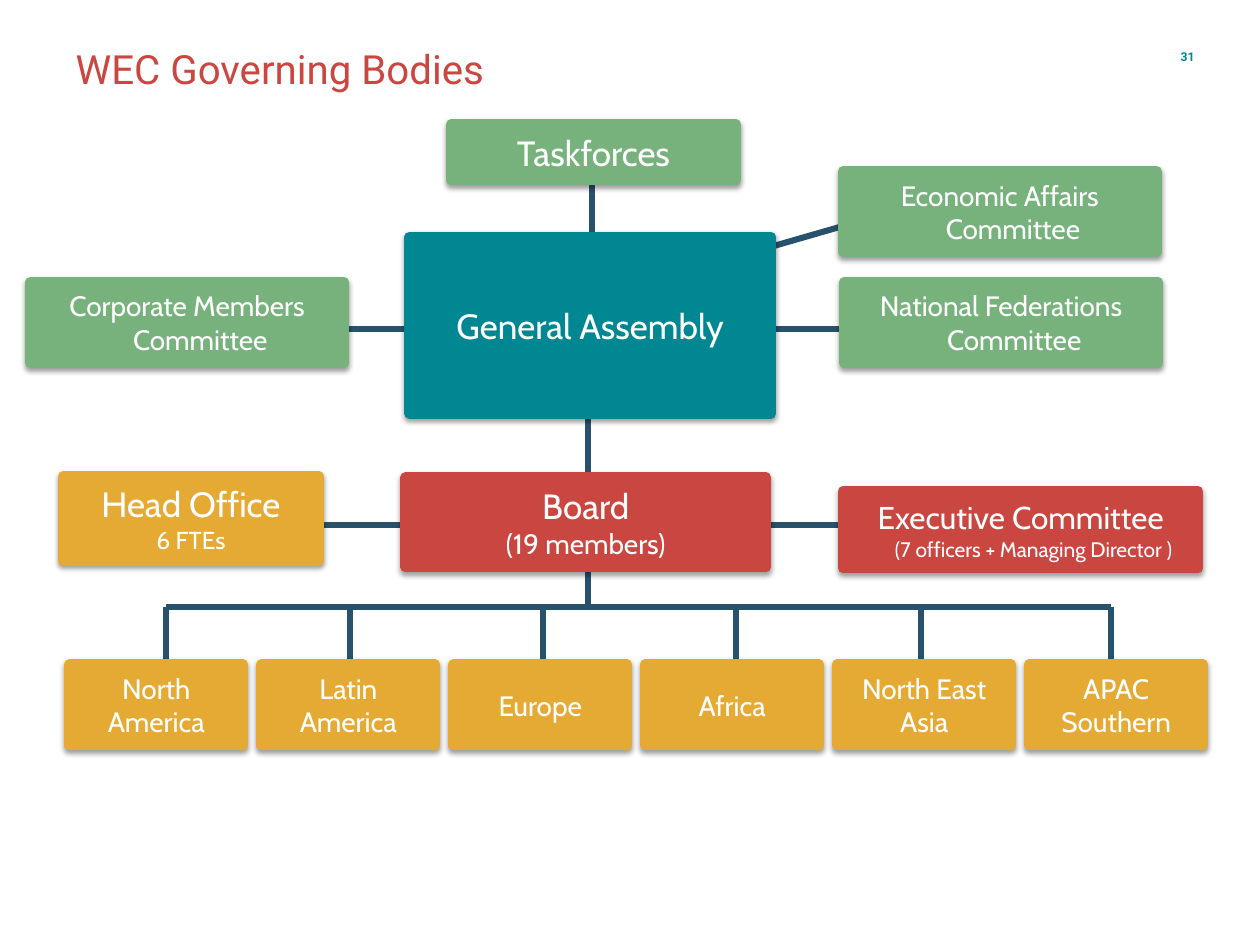
from lxml.etree import SubElement
from pptx import Presentation
from pptx.dml.color import RGBColor
from pptx.enum.shapes import MSO_CONNECTOR, MSO_SHAPE
from pptx.enum.text import MSO_ANCHOR, PP_ALIGN
from pptx.oxml import parse_xml
from pptx.oxml.ns import nsdecls, qn
from pptx.util import Pt

TEAL, GREEN, GOLD, RED, NAVY, WHITE = (
    "008792", "77B27C", "E5AA34", "CA4641", "28526C", "FFFFFF")
SHADOW = (
    f'<a:outerShdw {nsdecls("a")} blurRad="{Pt(3.1)}" dist="{Pt(1.6)}" '
    'dir="5400000" algn="ctr" rotWithShape="0">'
    '<a:srgbClr val="000000"><a:alpha val="38000"/></a:srgbClr></a:outerShdw>')


def paint(color, value):
    color.rgb = RGBColor.from_string(value)


def write_lines(frame, lines, color, align, **font_format):
    """Fill a text frame with (text, size) lines, centred vertically."""
    frame.word_wrap = True
    frame.vertical_anchor = MSO_ANCHOR.MIDDLE
    for index, (text, size) in enumerate(lines):
        para = frame.add_paragraph() if index else frame.paragraphs[0]
        para.alignment = align
        span = para.add_run()
        span.text = text
        for name, value in {"size": Pt(size), **font_format}.items():
            setattr(span.font, name, value)
        paint(span.font.color, color)


deck = Presentation()
deck.slide_width, deck.slide_height = Pt(720), Pt(540)
page = deck.slides.add_slide(deck.slide_layouts[5])

title = page.shapes.title
title_place = {"left": 36, "top": 21.6, "width": 440, "height": 35.3}
for name, value in title_place.items():
    setattr(title, name, Pt(value))
write_lines(title.text_frame, [("WEC Governing Bodies", 23)], "CB4641",
            PP_ALIGN.LEFT, name="Roboto")

number = page.shapes.add_textbox(Pt(661.7), Pt(18), Pt(28), Pt(28.8))
write_lines(number.text_frame, [("31", 7)], TEAL, PP_ALIGN.RIGHT,
            name="Roboto", bold=True)

# Lines: start x, start y, end x, end y
bus_y, region_y = 347, 379.8
branch_xs = [95, 200.2, 310.3, 420.5, 526.3, 635]
links = [
    (490.3, 126.7, 432.7, 143.3),  # Economic Affairs
    (338.4, 80.6, 338.4, 135.4),   # Taskforces
    (526.3, 187.9, 185, 187.9),    # committees beside the assembly
    (336.2, 226.8, 336.2, 280.8),  # assembly to board
    (230.4, 300.2, 180, 300.2),    # Head Office
    (483.1, 300.2, 432.7, 300.2),  # Executive Committee
    (336.2, 324.7, 336.2, bus_y),  # board to regions
    (branch_xs[0], bus_y, branch_xs[-1], bus_y),
]
links += [(x, bus_y, x, region_y + 5) for x in branch_xs]
for ends in links:
    link = page.shapes.add_connector(MSO_CONNECTOR.STRAIGHT, *map(Pt, ends))
    link.line.width = Pt(3.5)
    paint(link.line.color, NAVY)
    SubElement(link._element.spPr, qn("a:effectLst"))

# Boxes: left, top, width, height, fill, lines of text
boxes = [
    (36, 272.2, 146.2, 48.2, GOLD, [("Head Office", 20), ("6 FTEs", 14)]),
    (231.8, 272.9, 205.9, 51.1, RED, [("Board", 20), ("(19 members)", 16)]),
    (481.7, 280.8, 203, 43.9, RED,
     [("Executive Committee", 18), ("(7 officers + Managing Director )", 12)]),
    (234, 135.4, 206.6, 100.8, TEAL, [("General Assembly", 20)]),
    (257.8, 71.3, 162.7, 31.7, GREEN, [("Taskforces", 20)]),
]
committees = [
    (482.4, 161.3, "National Federations Committee"),
    (17.3, 161.3, "Corporate Members Committee"),
    (481.7, 97.9, "Economic Affairs Committee"),
]
boxes += [(left, top, 179.3, 46.1, GREEN, [(name, 16)])
          for left, top, name in committees]
regions = ["North America", "Latin America", "Europe", "Africa",
           "North East Asia", "APAC Southern"]
boxes += [(39.6 + 109.7 * column, region_y, 99.4, 46.1, GOLD, [(name, 16)])
          for column, name in enumerate(regions)]

for *place, color, lines in boxes:
    box = page.shapes.add_shape(MSO_SHAPE.RECTANGLE, *map(Pt, place))
    box.fill.solid()
    paint(box.fill.fore_color, color)
    paint(box.line.color, color)
    box.line.width = Pt(6)
    SubElement(box.line._get_or_add_ln(), qn("a:round"))
    box.shadow.inherit = False
    box._element.spPr.find(qn("a:effectLst")).append(parse_xml(SHADOW))
    write_lines(box.text_frame, lines, WHITE, PP_ALIGN.CENTER, name="Cabin")
    if "Committee" in lines[0][0]:
        for index, para in enumerate(box.text_frame.paragraphs):
            properties = para._p.get_or_add_pPr()
            properties.set("marL", str(Pt(15)))
            properties.set("indent", str(0 if index else Pt(-15)))

deck.save("out.pptx")
